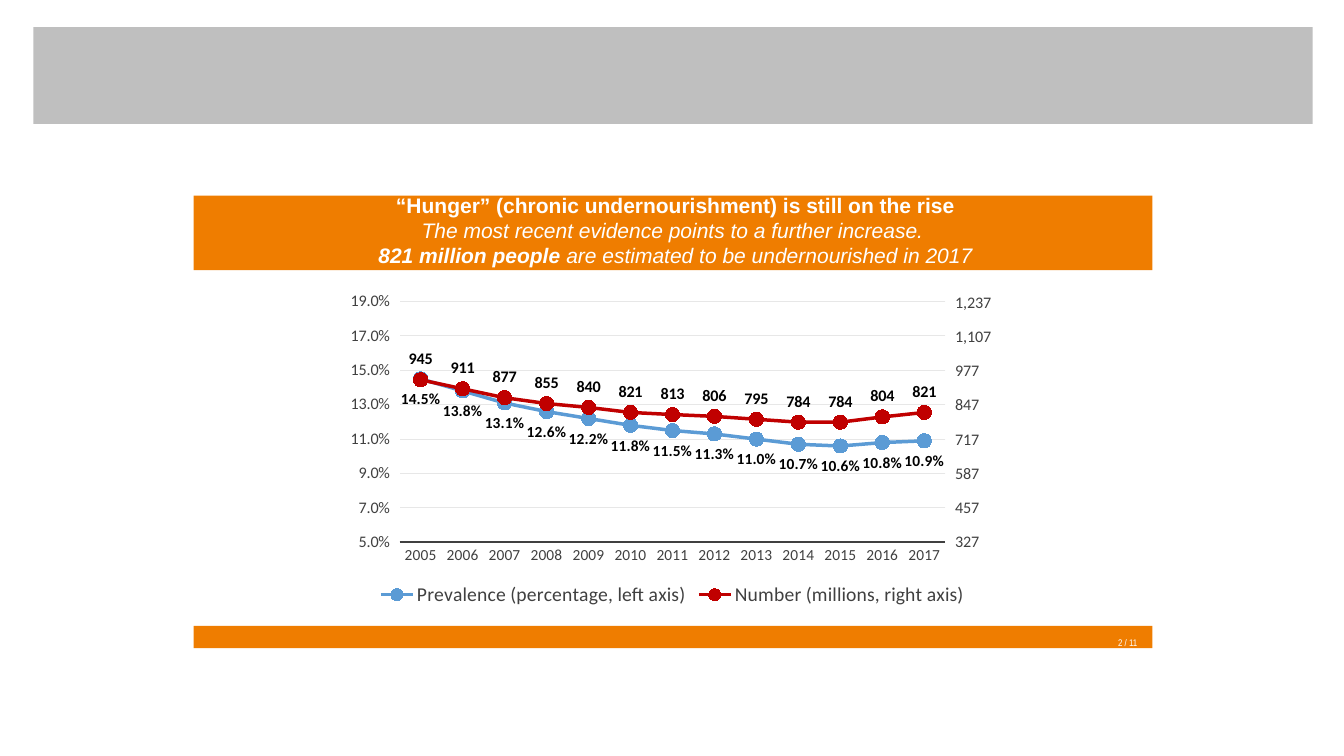
from copy import deepcopy
from dataclasses import dataclass

from lxml import etree
from pptx import Presentation
from pptx.chart.axis import ValueAxis
from pptx.chart.data import CategoryChartData
from pptx.dml.color import RGBColor
from pptx.enum.chart import (
    XL_CHART_TYPE, XL_LABEL_POSITION, XL_LEGEND_POSITION, XL_MARKER_STYLE, XL_TICK_MARK,
)
from pptx.enum.shapes import MSO_SHAPE
from pptx.enum.text import MSO_ANCHOR, MSO_AUTO_SIZE, PP_ALIGN
from pptx.oxml.ns import qn
from pptx.util import Inches, Pt

LINE_MARKERS = XL_CHART_TYPE.LINE_MARKERS
BELOW, ABOVE = XL_LABEL_POSITION.BELOW, XL_LABEL_POSITION.ABOVE
LEGEND_BOTTOM = XL_LEGEND_POSITION.BOTTOM
CIRCLE = XL_MARKER_STYLE.CIRCLE
TICK_NONE, TICK_OUT = XL_TICK_MARK.NONE, XL_TICK_MARK.OUTSIDE
RECTANGLE = MSO_SHAPE.RECTANGLE
MIDDLE = MSO_ANCHOR.MIDDLE
NO_AUTOFIT, GROW = MSO_AUTO_SIZE.NONE, MSO_AUTO_SIZE.SHAPE_TO_FIT_TEXT
CENTER, RIGHT = PP_ALIGN.CENTER, PP_ALIGN.RIGHT


@dataclass(frozen=True)
class Theme:
    orange: str = "EF7D00"
    grey: str = "BFBFBF"
    white: str = "FFFFFF"
    black: str = "000000"
    axis: str = "404040"
    grid: str = "E7E7E7"
    blue: str = "5B9BD5"
    red: str = "C00000"
    heading_font: str = "Arial"
    page_font: str = "Arial Narrow"
    chart_font: str = "Calibri"
    heading_size: float = 15
    page_size: float = 12
    legend_size: float = 14
    small_size: float = 11
    value_size: float = 11.5


@dataclass(frozen=True)
class Bar:
    left: float
    top: float
    width: float
    height: float
    color: str


@dataclass(frozen=True)
class Measure:
    name: str
    values: tuple
    number_format: str
    color: str
    label_position: object
    label_size: float


THEME = Theme()
BARS = (
    Bar(0.33, 0.27, 12.69, 0.96, THEME.grey),
    Bar(1.92, 6.21, 9.51, 0.22, THEME.orange),
    Bar(1.92, 1.94, 9.51, 0.74, THEME.orange),
)
YEARS = [str(year) for year in range(2005, 2018)]
MEASURES = (
    Measure(
        "Prevalence (percentage, left axis)",
        (0.145, 0.138, 0.131, 0.126, 0.122, 0.118, 0.115, 0.113, 0.110, 0.107, 0.106, 0.108, 0.109),
        "0.0%", THEME.blue, BELOW, THEME.small_size,
    ),
    Measure(
        "Number (millions, right axis)",
        (945, 911, 877, 855, 840, 821, 813, 806, 795, 784, 784, 804, 821),
        "#,##0", THEME.red, ABOVE, THEME.value_size,
    ),
)
PLOT_LAYOUT = {"x": 0.09, "y": 0.05, "w": 0.82, "h": 0.74}


def set_font(font, name: str, size: float, color: str) -> None:
    font.name = name
    font.size = Pt(size)
    font.color.rgb = RGBColor.from_string(color)


def set_line(line, color: str, width: float) -> None:
    line.color.rgb = RGBColor.from_string(color)
    line.width = Pt(width)


def add_bar(slide, bar: Bar) -> None:
    shape = slide.shapes.add_shape(
        RECTANGLE, Inches(bar.left), Inches(bar.top), Inches(bar.width), Inches(bar.height))
    shape.shadow.inherit = False
    shape.fill.solid()
    shape.fill.fore_color.rgb = RGBColor.from_string(bar.color)
    shape.line.fill.background()


def add_heading(slide) -> None:
    title = slide.shapes.title
    slide.shapes._spTree.append(title._element)
    title.left, title.top = Inches(3.13), Inches(1.94)
    title.width, title.height = Inches(7.14), Inches(0.69)
    frame = title.text_frame
    frame.auto_size = NO_AUTOFIT
    frame.word_wrap = True
    frame.vertical_anchor = MIDDLE
    frame.margin_left = frame.margin_right = Inches(0.07)
    frame.margin_top = frame.margin_bottom = Inches(0.04)
    headline, evidence = frame.paragraphs[0], frame.add_paragraph()
    headline.add_run().text = "“Hunger” (chronic undernourishment) is still on the rise"
    evidence.add_run().text = "The most recent evidence points to a further increase. "
    evidence.add_line_break()
    people = evidence.add_run()
    people.text = "821 million people "
    people.font.bold = True
    evidence.add_run().text = "are estimated to be undernourished in 2017"
    for paragraph in (headline, evidence):
        paragraph.alignment = CENTER
        set_font(paragraph.font, THEME.heading_font, THEME.heading_size, THEME.white)
    headline.font.bold = True
    evidence.font.italic = True


def add_page_number(slide) -> None:
    box = slide.shapes.add_textbox(Inches(10.95), Inches(6.25), Inches(0.43), Inches(0.24))
    frame = box.text_frame
    frame.word_wrap = False
    frame.auto_size = GROW
    paragraph = frame.paragraphs[0]
    paragraph.alignment = RIGHT
    run = paragraph.add_run()
    run.text = "2 / 11"
    set_font(run.font, THEME.page_font, THEME.page_size, THEME.white)
    run.font._element.set("baseline", "30000")


def style_series(series, measure: Measure) -> None:
    color = RGBColor.from_string(measure.color)
    series.smooth = False
    set_line(series.format.line, measure.color, 2.5)
    series.marker.style = CIRCLE
    series.marker.size = 10
    series.marker.format.fill.solid()
    series.marker.format.fill.fore_color.rgb = color
    series.marker.format.line.color.rgb = color
    labels = series.data_labels
    labels.show_value = True
    labels.position = measure.label_position
    labels.number_format = measure.number_format
    labels.number_format_is_linked = False
    set_font(labels.font, THEME.chart_font, measure.label_size, THEME.black)
    labels.font.bold = True


def style_value_axis(axis: ValueAxis, minimum: float, maximum: float, step: float,
                     number_format: str) -> None:
    axis.minimum_scale, axis.maximum_scale, axis.major_unit = minimum, maximum, step
    axis.major_tick_mark, axis.minor_tick_mark = TICK_OUT, TICK_NONE
    axis.format.line.fill.background()
    axis.tick_labels.number_format = number_format
    axis.tick_labels.number_format_is_linked = False
    set_font(axis.tick_labels.font, THEME.chart_font, THEME.value_size, THEME.axis)


def move_number_to_right_axis(plot_area) -> ValueAxis:
    left_plot = plot_area.find(qn("c:lineChart"))
    left_value, category = plot_area.find(qn("c:valAx")), plot_area.find(qn("c:catAx"))
    right_plot, right_value, hidden_category = map(deepcopy, (left_plot, left_value, category))
    left_plot.remove(left_plot.findall(qn("c:ser"))[1])
    right_plot.remove(right_plot.find(qn("c:ser")))
    left_plot.addnext(right_plot)
    left_value.addnext(right_value)
    right_value.addnext(hidden_category)
    category_id, value_id = "5001", "5002"
    for element, identifier in zip(right_plot.findall(qn("c:axId")), (category_id, value_id)):
        element.set("val", identifier)
    for axis, own, other in ((right_value, value_id, category_id),
                             (hidden_category, category_id, value_id)):
        axis.find(qn("c:axId")).set("val", own)
        axis.find(qn("c:crossAx")).set("val", other)
    hidden_category.find(qn("c:delete")).set("val", "1")
    right_value.find(qn("c:axPos")).set("val", "r")
    right_value.find(qn("c:crosses")).set("val", "max")
    return ValueAxis(right_value)


def set_plot_layout(plot_area) -> None:
    for existing in plot_area.findall(qn("c:layout")):
        plot_area.remove(existing)
    layout = etree.Element(qn("c:layout"))
    manual = etree.SubElement(layout, qn("c:manualLayout"))
    settings = {"layoutTarget": "inner", "xMode": "edge", "yMode": "edge", **PLOT_LAYOUT}
    for name, value in settings.items():
        etree.SubElement(manual, qn(f"c:{name}")).set("val", str(value))
    plot_area.insert(0, layout)


def add_hunger_chart(slide) -> None:
    data = CategoryChartData()
    data.categories = YEARS
    for measure in MEASURES:
        data.add_series(measure.name, measure.values, measure.number_format)
    chart = slide.shapes.add_chart(
        LINE_MARKERS, Inches(3.37), Inches(2.83), Inches(6.6), Inches(3.23), data).chart
    set_font(chart.font, THEME.chart_font, THEME.legend_size, THEME.black)
    chart.has_title = False
    chart.has_legend = True
    chart.legend.position = LEGEND_BOTTOM
    chart.legend.include_in_layout = False
    set_font(chart.legend.font, THEME.chart_font, THEME.legend_size, THEME.axis)
    chart.plots[0].vary_by_categories = False
    for series, measure in zip(chart.plots[0].series, MEASURES):
        style_series(series, measure)
    years, left_axis = chart.category_axis, chart.value_axis
    years.major_tick_mark = years.minor_tick_mark = TICK_NONE
    set_line(years.format.line, THEME.axis, 1.5)
    set_font(years.tick_labels.font, THEME.chart_font, THEME.small_size, THEME.axis)
    plot_area = chart._chartSpace.find(f".//{qn('c:plotArea')}")
    between = etree.Element(qn("c:crossBetween"))
    between.set("val", "between")
    plot_area.find(qn("c:valAx")).find(qn("c:crosses")).addnext(between)
    right_axis = move_number_to_right_axis(plot_area)
    style_value_axis(left_axis, 0.05, 0.19, 0.02, "0.0%")
    set_line(left_axis.major_gridlines.format.line, THEME.grid, 0.75)
    style_value_axis(right_axis, 327, 1243, 130, "#,##0")
    right_axis.has_major_gridlines = False
    set_plot_layout(plot_area)


def main() -> None:
    presentation = Presentation()
    presentation.slide_width, presentation.slide_height = Inches(13.33), Inches(7.5)
    slide = presentation.slides.add_slide(presentation.slide_layouts[5])
    for bar in BARS:
        add_bar(slide, bar)
    add_page_number(slide)
    add_heading(slide)
    add_hunger_chart(slide)
    presentation.save("out.pptx")


if __name__ == "__main__":
    main()
